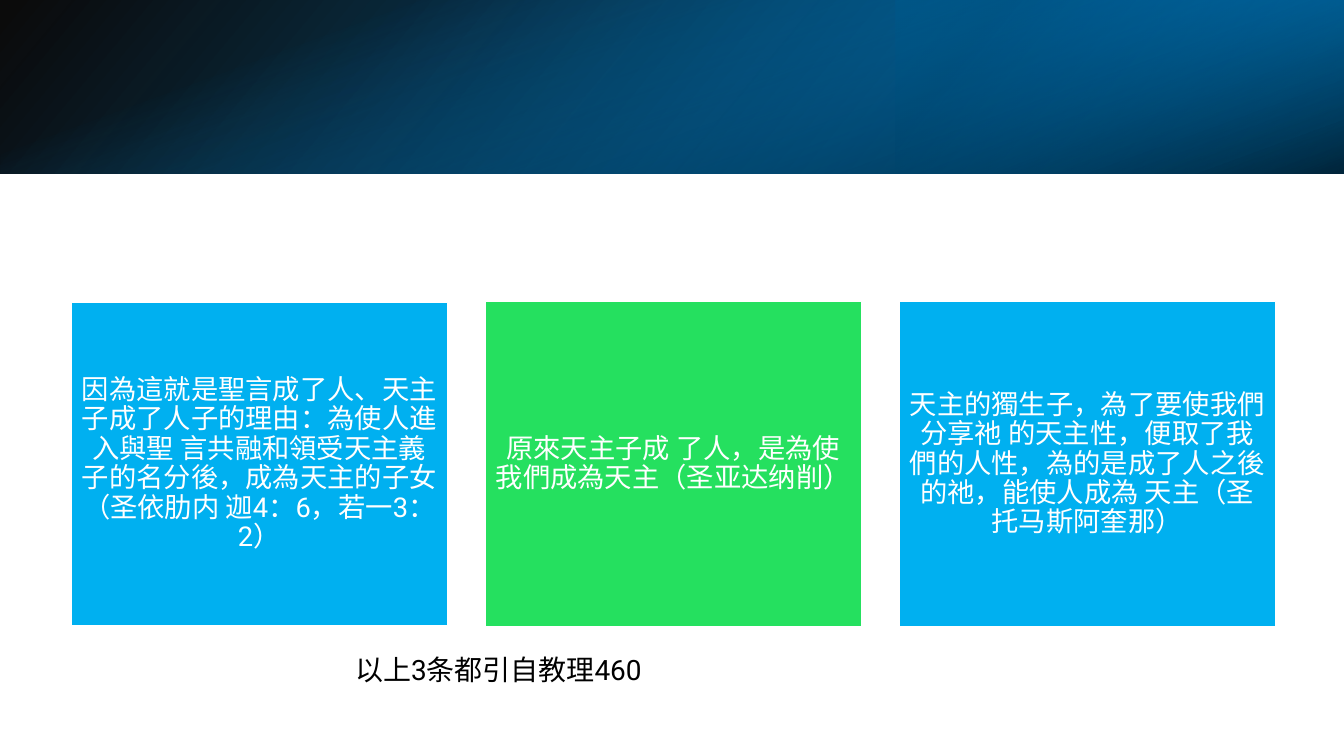
from lxml import etree
from pptx import Presentation
from pptx.dml.color import RGBColor
from pptx.enum.shapes import MSO_SHAPE
from pptx.enum.text import MSO_ANCHOR, PP_ALIGN
from pptx.oxml.ns import qn
from pptx.util import Inches, Pt

RECTANGLE = MSO_SHAPE.RECTANGLE
MIDDLE = MSO_ANCHOR.MIDDLE
CENTER = PP_ALIGN.CENTER

WHITE = RGBColor(0xFF, 0xFF, 0xFF)
BLACK = RGBColor(0x00, 0x00, 0x00)
SKY = RGBColor(0x00, 0xB0, 0xF0)
GREEN = RGBColor(0x25, 0xE0, 0x5F)
DEEP_BLUE = RGBColor(0x00, 0x79, 0xBF)
DARK_BLUE = RGBColor(0x00, 0x51, 0x80)
BRIGHT_BLUE = RGBColor(0x00, 0xA2, 0xFF)

WIDTH, HEIGHT = 26.67, 15
BANNER = 0.23 * HEIGHT
FONT = "Roboto"

# Card grid: left edge of the first column and the step between columns
CARD_LEFT, CARD_STEP, CARD_WIDTH = 1.41, 8.215, 7.47
CARDS = [
    (SKY, 6, 6.41, "因為這就是聖言成了人、天主子成了人子的理由：為使人進入與聖 言共融和領受"
                   "天主義子的名分後，成為天主的子女（圣依肋内 迦4：6，若一3：2）"),
    (GREEN, 5.98, 6.46, "原來天主子成 了人，是為使我們成為天主（圣亚达纳削）"),
    (SKY, 5.98, 6.46, "天主的獨生子，為了要使我們分享祂 的天主性，便取了我們的人性，"
                      "為的是成了人之後的祂，能使人成為 天主（圣托马斯阿奎那）"),
]
CAPTION = "以上3条都引自教理460"


def set_gradient(shape, angle, stops):
    """Fill with a linear gradient; stops are (position, colour, opacity) in percent."""
    shape.fill.gradient()
    gradient = shape._element.spPr.find(qn("a:gradFill"))
    stop_list = gradient.find(qn("a:gsLst"))
    for old_stop in list(stop_list):
        stop_list.remove(old_stop)
    for position, color, opacity in stops:
        stop = etree.SubElement(stop_list, qn("a:gs"), pos=str(position * 1000))
        value = etree.SubElement(stop, qn("a:srgbClr"), val=str(color))
        etree.SubElement(value, qn("a:alpha"), val=str(opacity * 1000))
    gradient.find(qn("a:lin")).set("ang", str(angle * 60000))


def add_rectangle(slide, left, top, width, height):
    shape = slide.shapes.add_shape(
        RECTANGLE, Inches(left), Inches(top), Inches(width), Inches(height))
    shape.shadow.inherit = False
    return shape


def add_banner_layer(slide, box, angle, stops, rotation=0, flip=False):
    shape = add_rectangle(slide, *box)
    shape.line.fill.background()
    shape.rotation = rotation
    if flip:
        shape._element.spPr.find(qn("a:xfrm")).set("flipH", "1")
    set_gradient(shape, angle, stops)


def write_text(shape, text, size, color, inset, line_spacing=1.0):
    frame = shape.text_frame
    frame_format = {"word_wrap": True, "vertical_anchor": MIDDLE}
    for side in ("left", "top", "right", "bottom"):
        frame_format["margin_" + side] = Inches(inset)
    for name, value in frame_format.items():
        setattr(frame, name, value)
    paragraph = frame.paragraphs[0]
    paragraph.text = text
    paragraph.alignment = CENTER
    paragraph.line_spacing = line_spacing
    font = paragraph.runs[0].font
    for name, value in {"name": FONT, "size": Pt(size)}.items():
        setattr(font, name, value)
    font.color.rgb = color


def add_card(slide, column, color, top, height, text):
    card = add_rectangle(slide, CARD_LEFT + column * CARD_STEP, top, CARD_WIDTH, height)
    card.fill.solid()
    card.fill.fore_color.rgb = color
    card.line.color.rgb = WHITE
    card.line.width = Pt(2)
    write_text(card, text, 39, WHITE, 0.16, 0.9)


def main():
    presentation = Presentation()
    presentation.slide_width = Inches(WIDTH)
    presentation.slide_height = Inches(HEIGHT)
    slide = presentation.slides.add_slide(presentation.slide_layouts[6])

    # Banner: three gradients, the last one a tall strip turned on its side
    add_banner_layer(slide, (0, 0, WIDTH, BANNER), 140,
                     [(0, BLACK, 96), (100, DEEP_BLUE, 100)], flip=True)
    add_banner_layer(slide, (WIDTH * 2 / 3, 0, WIDTH / 3, BANNER), 320,
                     [(19, DARK_BLUE, 68), (100, BRIGHT_BLUE, 79)], 180, True)
    add_banner_layer(slide, ((WIDTH - BANNER) / 2, (BANNER - WIDTH) / 2, BANNER, WIDTH),
                     340, [(23, BRIGHT_BLUE, 0), (99, BLACK, 74)], 90)

    # Three quotation cards
    for column, card in enumerate(CARDS):
        add_card(slide, column, *card)

    # Source caption
    caption = slide.shapes.add_textbox(
        Inches(6.93), Inches(12.64), Inches(5.92), Inches(1.29))
    write_text(caption, CAPTION, 40, BLACK, 0.06)

    presentation.save("out.pptx")


if __name__ == "__main__":
    main()
